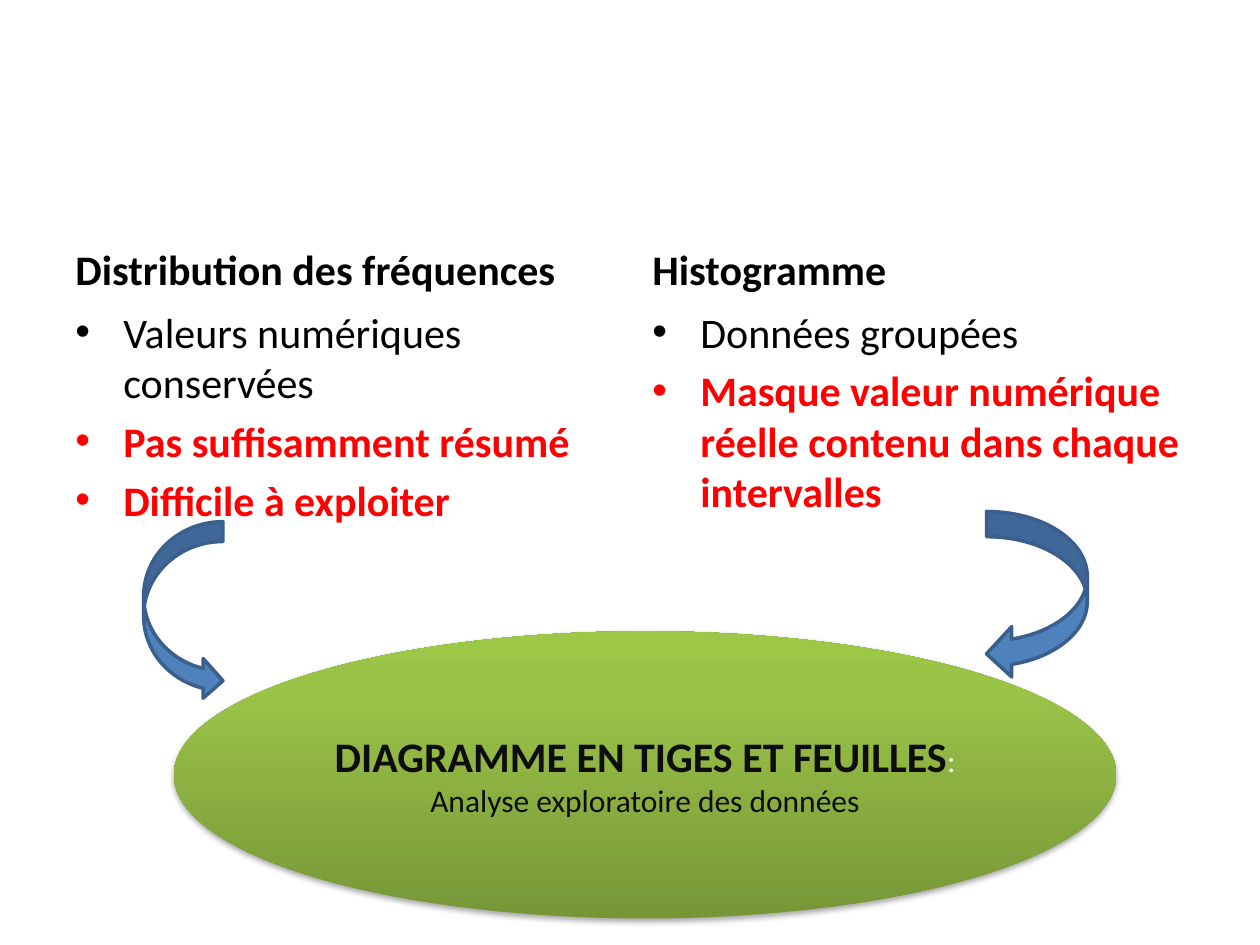
from copy import deepcopy

from lxml.etree import SubElement
from pptx import Presentation
from pptx.dml.color import RGBColor
from pptx.enum.shapes import MSO_SHAPE
from pptx.enum.text import MSO_ANCHOR, PP_ALIGN
from pptx.oxml.ns import qn
from pptx.util import Inches, Pt

BLACK = RGBColor(0x00, 0x00, 0x00)
NEAR_BLACK = RGBColor(0x0D, 0x0D, 0x0D)
WHITE = RGBColor(0xFF, 0xFF, 0xFF)
RED = RGBColor(0xFF, 0x00, 0x00)
BLUE = RGBColor(0x4F, 0x81, 0xBD)
DARK_BLUE = RGBColor(0x3A, 0x5F, 0x8C)
GREENS = [
    (0, RGBColor(0x77, 0x97, 0x37)),
    (0.8, RGBColor(0x9B, 0xC3, 0x48)),
    (1, RGBColor(0x9D, 0xC7, 0x46)),
]


class SlideBuilder:
    """Holds the text style and the current slide, and adds its elements."""

    font_name = "Calibri"
    large = Pt(24)
    small = Pt(18)

    def __init__(self, slide):
        self.slide = slide

    def style(self, font, size, color, bold=False):
        font.name = self.font_name
        font.size = size
        font.bold = bold
        font.color.rgb = color

    def text_frame(self, left, top, width, height, anchor):
        shape = self.slide.shapes.add_textbox(
            Inches(left), Inches(top), Inches(width), Inches(height))
        shape.text_frame.word_wrap = True
        shape.text_frame.vertical_anchor = anchor
        return shape.text_frame

    def paragraph(self, frame, text, color, bold, first):
        paragraph = frame.paragraphs[0] if first else frame.add_paragraph()
        paragraph.text = text
        paragraph.space_before = Pt(4.8)
        self.style(paragraph.font, self.large, color, bold)
        return paragraph

    def heading(self, left, text):
        frame = self.text_frame(left, 1.68, 4.42, 0.7, MSO_ANCHOR.BOTTOM)
        self.paragraph(frame, text, BLACK, True, True)

    def bullets(self, left, advantage, drawbacks):
        frame = self.text_frame(left, 2.38, 4.42, 4.32, MSO_ANCHOR.TOP)
        for index, text in enumerate([advantage, *drawbacks]):
            drawback = index > 0
            paragraph = self.paragraph(
                frame, text, RED if drawback else BLACK, drawback, not drawback)
            properties = paragraph._p.get_or_add_pPr()
            properties.set("marL", str(Inches(0.38)))
            properties.set("indent", str(-Inches(0.38)))
            bullet_font = properties.makeelement(qn("a:buFont"), {"typeface": "Arial"})
            bullet = properties.makeelement(qn("a:buChar"), {"char": "•"})
            defaults = properties.find(qn("a:defRPr"))
            defaults.addprevious(bullet_font)
            defaults.addprevious(bullet)

    def shape(self, kind, left, top, width, height):
        shape = self.slide.shapes.add_shape(
            kind, Inches(left), Inches(top), Inches(width), Inches(height))
        shape.shadow.inherit = False
        return shape

    def arrow(self, kind, left, top, width, height):
        shape = self.shape(kind, left, top, width, height)
        shape.fill.solid()
        shape.fill.fore_color.rgb = BLUE
        shape.line.color.rgb = DARK_BLUE
        shape.line.width = Pt(2)

    def gradient(self, shape, stops):
        shape.fill.gradient()
        shape.fill.gradient_angle = 90
        stop_list = shape._element.spPr.find(qn("a:gradFill")).find(qn("a:gsLst"))
        stop_list.append(deepcopy(stop_list[-1]))
        for stop, (position, color) in zip(shape.fill.gradient_stops, stops):
            stop.position = position
            stop.color.rgb = color

    def drop_shadow(self, shape):
        effects = shape._element.spPr.find(qn("a:effectLst"))
        shadow = SubElement(
            effects, qn("a:outerShdw"), blurRad=str(Pt(3.1)), dist=str(Pt(1.8)),
            dir="5400000", rotWithShape="0")
        color = SubElement(shadow, qn("a:srgbClr"), val="000000")
        SubElement(color, qn("a:alpha"), val="35000")

    def ellipse(self, left, top, width, height, title, separator, subtitle):
        shape = self.shape(MSO_SHAPE.OVAL, left, top, width, height)
        self.gradient(shape, GREENS)
        shape.line.fill.background()
        self.drop_shadow(shape)
        frame = shape.text_frame
        frame.word_wrap = True
        frame.vertical_anchor = MSO_ANCHOR.MIDDLE
        paragraph = frame.paragraphs[0]
        paragraph.alignment = PP_ALIGN.CENTER
        for text, size, color, bold in [
            (title, self.large, NEAR_BLACK, True),
            (separator, self.small, WHITE, False),
            (subtitle, self.small, NEAR_BLACK, False),
        ]:
            run = paragraph.add_run()
            run.text = text
            self.style(run.font, size, color, bold)


def main():
    presentation = Presentation()
    presentation.slide_width = Inches(10)
    presentation.slide_height = Inches(7.5)
    builder = SlideBuilder(presentation.slides.add_slide(presentation.slide_layouts[6]))

    columns = [
        (0.5, "Distribution des fréquences", "Valeurs numériques conservées",
         ["Pas suffisamment résumé", "Difficile à exploiter"]),
        (5.08, "Histogramme", "Données groupées",
         ["Masque valeur numérique réelle contenu dans chaque intervalles"]),
    ]
    for left, heading, advantage, drawbacks in columns:
        builder.heading(left, heading)
        builder.bullets(left, advantage, drawbacks)

    builder.ellipse(1.38, 5.01, 7.48, 2.28, "DIAGRAMME EN TIGES ET FEUILLES",
                    ": ", "Analyse exploratoire des données")
    builder.arrow(MSO_SHAPE.CURVED_LEFT_ARROW, 7.83, 4.06, 0.8, 1.33)
    builder.arrow(MSO_SHAPE.CURVED_RIGHT_ARROW, 1.14, 4.14, 0.63, 1.42)
    presentation.save("out.pptx")


if __name__ == "__main__":
    main()
